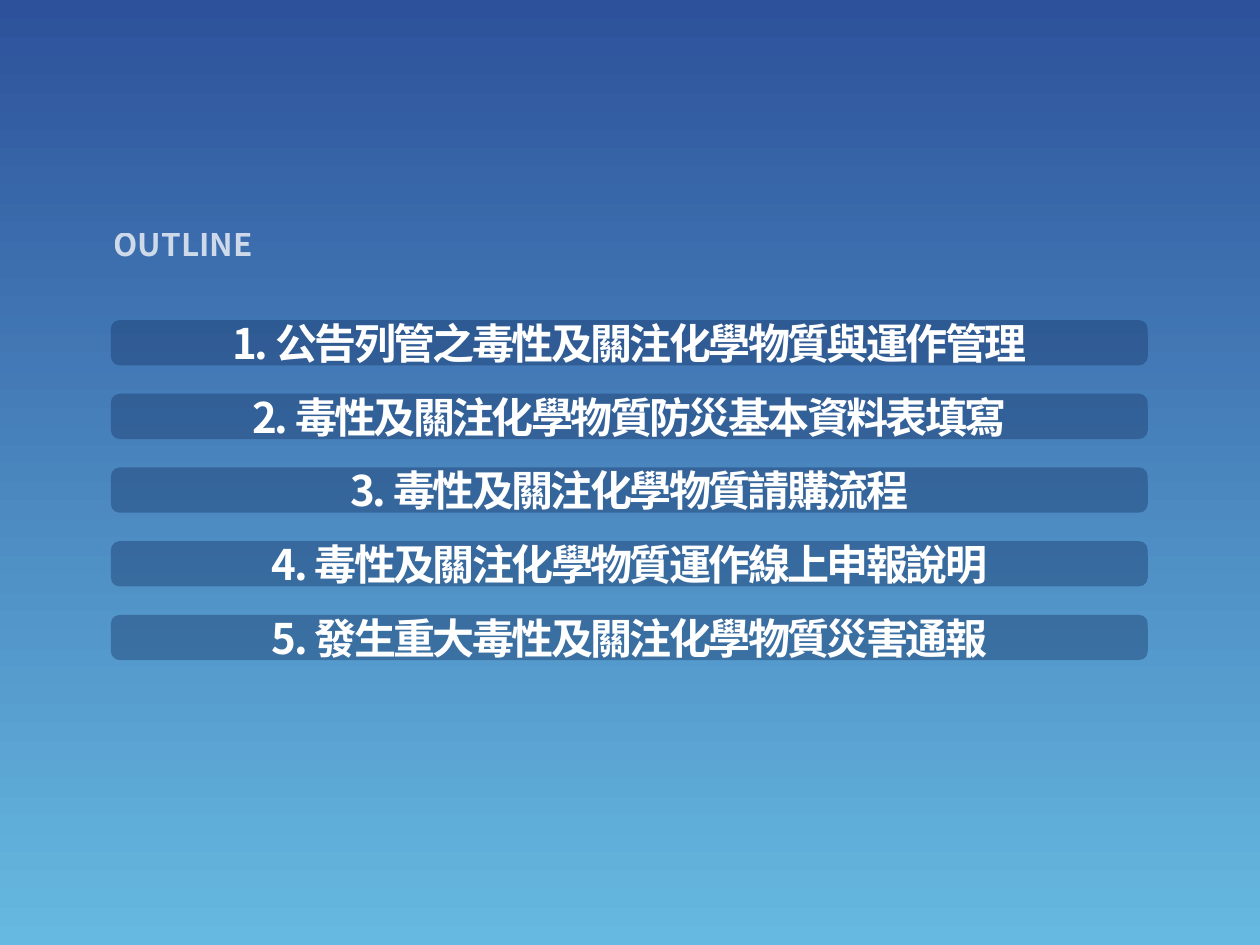
from dataclasses import dataclass

from lxml.etree import SubElement
from pptx import Presentation
from pptx.dml.color import RGBColor
from pptx.enum.shapes import MSO_SHAPE
from pptx.enum.text import MSO_ANCHOR, PP_ALIGN
from pptx.oxml.ns import qn
from pptx.util import Inches, Pt

HEADING = "OUTLINE"
TOPICS = [
    "公告列管之毒性及關注化學物質與運作管理",
    "毒性及關注化學物質防災基本資料表填寫",
    "毒性及關注化學物質請購流程",
    "毒性及關注化學物質運作線上申報說明",
    "發生重大毒性及關注化學物質災害通報",
]


@dataclass(frozen=True)
class Theme:
    font: str = "Noto Sans CJK SC"
    sky_top: RGBColor = RGBColor(0x2D, 0x52, 0x9B)
    sky_bottom: RGBColor = RGBColor(0x66, 0xB9, 0xE1)
    bar: RGBColor = RGBColor(0x15, 0x33, 0x65)
    bar_opacity: int = 40
    text: RGBColor = RGBColor(0xFF, 0xFF, 0xFF)
    heading_opacity: int = 75
    heading_size: int = 18
    topic_size: int = 24
    topic_spacing: float = -1.5


THEME = Theme()
BAR_LEFT, BAR_TOP, BAR_WIDTH, BAR_HEIGHT = 0.88, 2.54, 8.23, 0.36
BAR_PITCH = 0.585
BAR_ROUNDING = 0.195


def set_opacity(fill, percent):
    """Make an already coloured solid fill partly transparent."""
    color = fill._xPr.find(qn("a:solidFill"))[0]
    SubElement(color, qn("a:alpha"), val=str(percent * 1000))


def write_line(frame, text, size, opacity=100, spacing=0):
    """Write one bold centred line; spacing is between letters, in points."""
    frame.word_wrap = False
    line = frame.paragraphs[0]
    line.text = text
    line.alignment = PP_ALIGN.CENTER
    font = line.font
    font.name, font.size, font.bold = THEME.font, Pt(size), True
    font.color.rgb = THEME.text
    if opacity < 100:
        set_opacity(font.fill, opacity)
    properties = font._element
    properties.find(qn("a:latin")).addnext(
        properties.makeelement(qn("a:ea"), {"typeface": THEME.font})
    )
    if spacing:
        properties.set("spc", str(int(spacing * 100)))


def paint_background(slide):
    sky = slide.background.fill
    sky.gradient()
    sky.gradient_angle = 270
    for stop, color in zip(sky.gradient_stops, (THEME.sky_top, THEME.sky_bottom)):
        stop.color.rgb = color


def add_heading(slide):
    heading = slide.shapes.add_textbox(
        Inches(0.47), Inches(1.74), Inches(1.97), Inches(0.43)
    )
    write_line(heading.text_frame, HEADING, THEME.heading_size, THEME.heading_opacity)


def add_topic(slide, number, topic):
    top = BAR_TOP + (number - 1) * BAR_PITCH
    bar = slide.shapes.add_shape(
        MSO_SHAPE.ROUNDED_RECTANGLE,
        Inches(BAR_LEFT), Inches(top), Inches(BAR_WIDTH), Inches(BAR_HEIGHT),
    )
    bar.adjustments[0] = BAR_ROUNDING
    bar.shadow.inherit = False
    bar.line.fill.background()
    bar.fill.solid()
    bar.fill.fore_color.rgb = THEME.bar
    set_opacity(bar.fill, THEME.bar_opacity)
    bar.text_frame.vertical_anchor = MSO_ANCHOR.MIDDLE
    write_line(
        bar.text_frame, f"{number}. {topic}", THEME.topic_size,
        spacing=THEME.topic_spacing,
    )


def main():
    deck = Presentation()
    deck.slide_width, deck.slide_height = Inches(10), Inches(7.5)
    slide = deck.slides.add_slide(deck.slide_layouts[6])
    paint_background(slide)
    add_heading(slide)
    for number, topic in enumerate(TOPICS, start=1):
        add_topic(slide, number, topic)
    deck.save("out.pptx")


if __name__ == "__main__":
    main()
